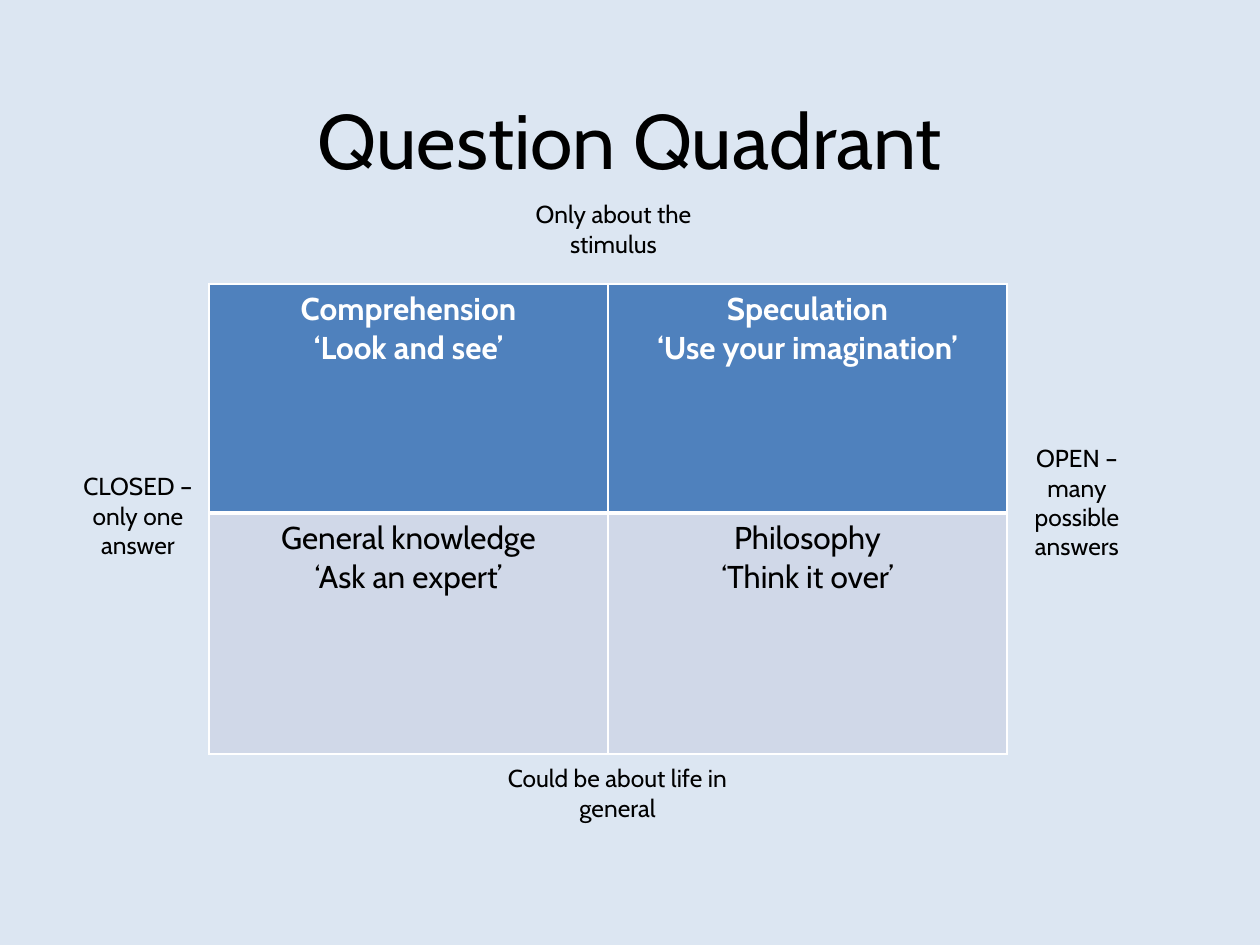
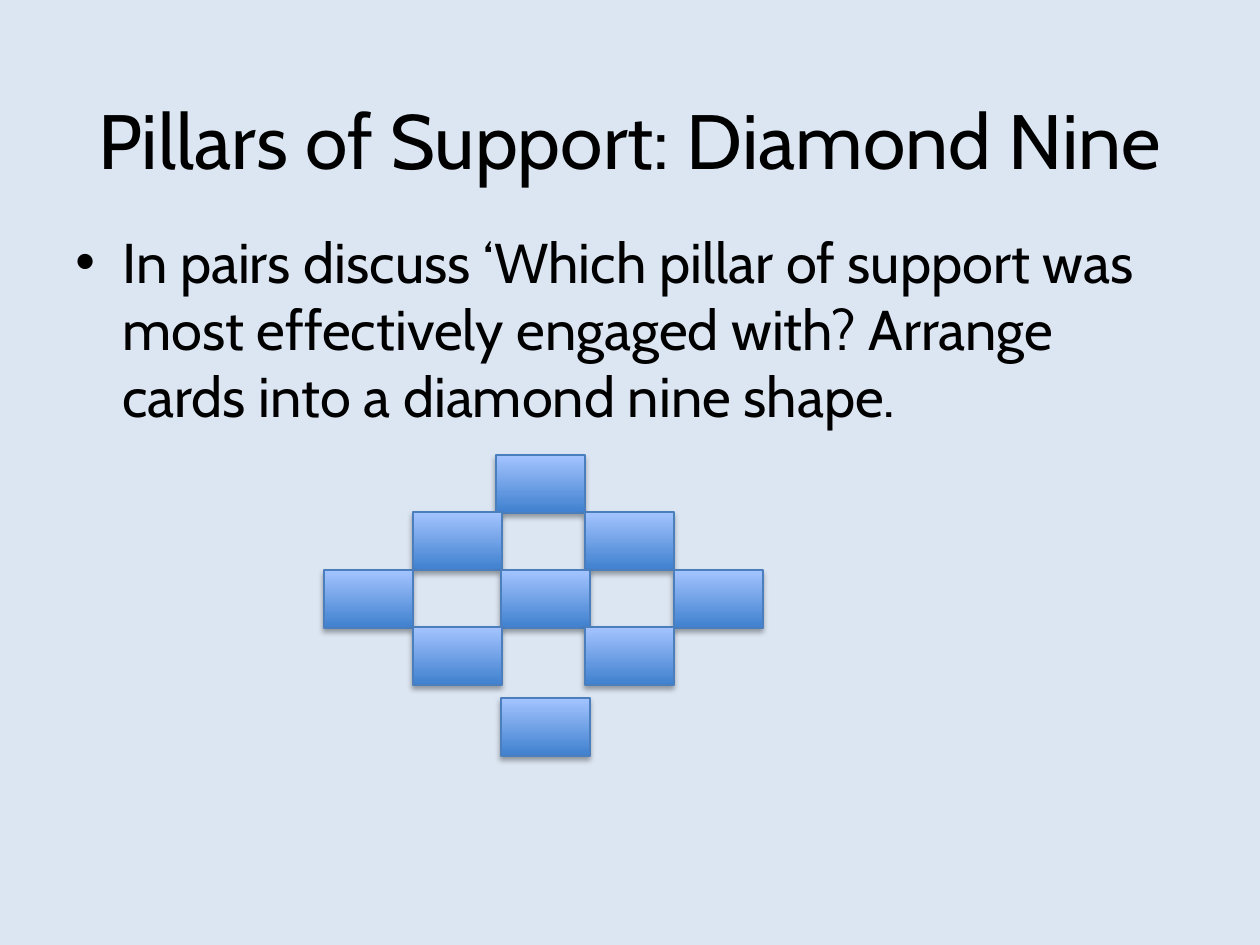
from dataclasses import dataclass

from lxml.etree import SubElement
from pptx import Presentation
from pptx.dml.color import RGBColor
from pptx.enum.shapes import MSO_SHAPE as Shape
from pptx.enum.text import MSO_ANCHOR as Anchor, MSO_AUTO_SIZE as AutoSize, PP_ALIGN as Align
from pptx.oxml import parse_xml
from pptx.oxml.ns import nsdecls, qn
from pptx.util import Pt


@dataclass(frozen=True)
class Theme:
    font: str = "Cabin"
    ground: str = "DCE6F2"
    ink: str = "000000"
    white: str = "FFFFFF"
    header: str = "4F81BD"
    band: str = "D0D8E8"
    card_low: str = "3F80CE"
    card_high: str = "A4C4FF"
    card_line: str = "4B7EBC"
    title_size: int = 44
    body_size: int = 32
    cell_size: int = 18
    label_size: int = 14


THEME = Theme()
SCALE = 914400 / 126
PAGE_SIZE = (1260, 945)
TITLE_BOX = (63, 81, 1134, 115)


def emu(*lengths):
    return [round(length * SCALE) for length in lengths]


def rgb(code):
    return RGBColor.from_string(code)


def set_all(target, formats):
    for name, value in formats.items():
        setattr(target, name, value)


# Text shared by boxes and cells
def write(frame, lines, size, color=THEME.ink, bold=False, align=Align.CENTER):
    for index, line in enumerate(lines):
        para = frame.paragraphs[0] if index == 0 else frame.add_paragraph()
        para.alignment = align
        span = para.add_run()
        span.text = line
        set_all(span.font, {"name": THEME.font, "size": Pt(size), "bold": bold})
        span.font.color.rgb = rgb(color)


def add_text(page, box, text, size, align=Align.CENTER, **frame_formats):
    frame = page.shapes.add_textbox(*emu(*box)).text_frame
    set_all(frame, {"word_wrap": True, **frame_formats})
    write(frame, [text], size, align=align)
    return frame


def add_page(deck, title):
    page = deck.slides.add_slide(deck.slide_layouts[6])
    add_text(page, TITLE_BOX, title, THEME.title_size, vertical_anchor=Anchor.MIDDLE)
    return page


# Question quadrant: table and axis labels
def set_borders(cell, widths):
    properties = cell._tc.get_or_add_tcPr()
    for index, (side, width) in enumerate(widths.items()):
        properties.insert(index, parse_xml(
            f'<a:ln{side} {nsdecls("a")} w="{Pt(width)}"><a:solidFill>'
            f'<a:srgbClr val="{THEME.white}"/></a:solidFill></a:ln{side}>'))


def quadrant_table(page, box, row_heights):
    cells = [
        [("Comprehension", "‘Look and see’"), ("Speculation", "‘Use your imagination’")],
        [("General knowledge", "‘Ask an expert’"), ("Philosophy", "‘Think it over’")],
    ]
    styles = [
        (THEME.header, THEME.white, True, {"L": 1, "R": 1, "T": 1, "B": 3}),
        (THEME.band, THEME.ink, False, {"L": 1, "R": 1, "T": 3, "B": 1}),
    ]
    table = page.shapes.add_table(2, 2, *emu(*box)).table
    set_all(table, {"first_row": False, "horz_banding": False})
    for row, height in zip(table.rows, emu(*row_heights)):
        row.height = height
    for row, texts, (fill, color, bold, borders) in zip(table.rows, cells, styles):
        for cell, lines in zip(row.cells, texts):
            cell.fill.solid()
            cell.fill.fore_color.rgb = rgb(fill)
            set_borders(cell, borders)
            write(cell.text_frame, lines, THEME.cell_size, color, bold)


def axis_labels(page, box):
    left, top, width, height = box
    labels = [
        ("Only about the stimulus", (left + 314, top - 91, 181, 72)),
        ("Could be about life in general", (left + 284, top + height + 3, 249, 72)),
        ("CLOSED – only one answer", (left - 141, top + 181, 140, 102)),
        ("OPEN – many possible answers", (left + width, top + 153, 140, 131)),
    ]
    for text, label_box in labels:
        add_text(page, label_box, text, THEME.label_size, auto_size=AutoSize.SHAPE_TO_FIT_TEXT)


def quadrant_page(deck):
    page = add_page(deck, "Question Quadrant")
    row_heights = (229, 241)
    box = (209, 284, 798, sum(row_heights))
    quadrant_table(page, box, row_heights)
    axis_labels(page, box)


# Diamond nine: bulleted task and card layout
def task_text(page, box):
    frame = add_text(
        page, box,
        "In pairs discuss ‘Which pillar of support was most effectively engaged with? "
        "Arrange cards into a diamond nine shape.",
        THEME.body_size, Align.LEFT)
    properties = frame.paragraphs[0]._p.get_or_add_pPr()
    indent, = emu(47)
    properties.set("marL", str(indent))
    properties.set("indent", str(-indent))
    SubElement(properties, qn("a:buFont"), typeface="Arial")
    SubElement(properties, qn("a:buChar"), char="•")


def add_card(page, box):
    card = page.shapes.add_shape(Shape.RECTANGLE, *emu(*box))
    card.fill.gradient()
    card.fill.gradient_angle = 90
    stops = [(0, THEME.card_low), (1, THEME.card_high)]
    for stop, (position, color) in zip(card.fill.gradient_stops, stops):
        stop.position = position
        stop.color.rgb = rgb(color)
    card.line.width = Pt(0.75)
    card.line.color.rgb = rgb(THEME.card_line)
    # Soft shadow straight below the card
    card.shadow.inherit = False
    card._element.spPr.find(qn("a:effectLst")).append(parse_xml(
        f'<a:outerShdw {nsdecls("a")} blurRad="{Pt(3.1)}" dist="{Pt(1.8)}" dir="5400000" '
        f'rotWithShape="0"><a:srgbClr val="{THEME.ink}"><a:alpha val="35000"/>'
        '</a:srgbClr></a:outerShdw>'))


def diamond(page, box):
    left, top, card_width, card_height = box
    rows = {0: [172], 57: [89, 261], 115: [0, 177, 350], 172: [89, 261], 243: [177]}
    for down, offsets in rows.items():
        for across in offsets:
            add_card(page, (left + across, top + down, card_width, card_height))


def diamond_page(deck):
    page = add_page(deck, "Pillars of Support: Diamond Nine")
    task_text(page, (63, 221, 1134, 624))
    diamond(page, (324, 455, 89, 58))


def main():
    deck = Presentation()
    deck.slide_width, deck.slide_height = emu(*PAGE_SIZE)
    ground = deck.slide_master.background.fill
    ground.solid()
    ground.fore_color.rgb = rgb(THEME.ground)
    quadrant_page(deck)
    diamond_page(deck)
    deck.save("out.pptx")


if __name__ == "__main__":
    main()
